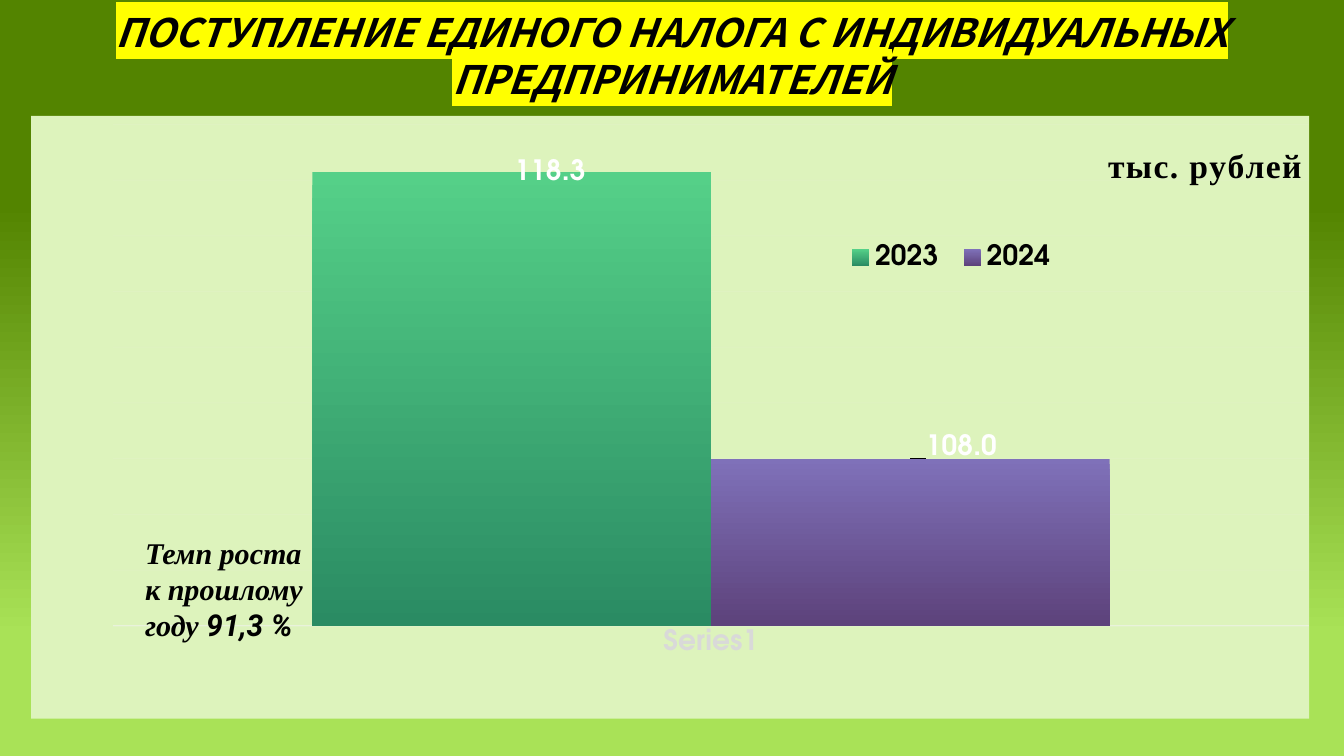
from dataclasses import dataclass

from lxml import etree
from pptx import Presentation
from pptx.chart.data import CategoryChartData
from pptx.dml.color import RGBColor
from pptx.enum.chart import XL_CHART_TYPE as ChartType
from pptx.enum.chart import XL_LABEL_POSITION as LabelPosition
from pptx.enum.chart import XL_LEGEND_POSITION as LegendPosition
from pptx.enum.chart import XL_TICK_LABEL_POSITION as TickLabels
from pptx.enum.chart import XL_TICK_MARK as TickMark
from pptx.enum.text import MSO_ANCHOR as Anchor
from pptx.enum.text import MSO_AUTO_SIZE as AutoSize
from pptx.enum.text import PP_ALIGN as Align
from pptx.oxml import parse_xml
from pptx.oxml.ns import nsdecls, qn
from pptx.util import Inches, Pt


@dataclass(frozen=True)
class Theme:
    background: tuple = ((0.27, "538400"), (0.84, "A9E257"))
    panel: str = "DDF3BC"
    ink: str = "000000"
    light: str = "FFFFFF"
    marker: str = "FFFF00"
    axis_text: str = "D9D9D9"
    rule: str = "F2F2F2"
    title_font: str = "Noto Sans CJK TC"
    chart_font: str = "TeX Gyre Adventor"
    serif_font: str = "Times New Roman"
    number_font: str = "Roboto"
    title_size: float = 28
    unit_size: float = 24
    note_size: float = 21.5
    chart_size: float = 20


THEME = Theme()

# Year, value, gradient colours, label shift as fractions of the chart
YEARS = (
    ("2023", 118.3, ("55D088", "2A8B63"), (0.03, 0.03)),
    ("2024", 108.0, ("7F71B9", "5D427B"), (0.04, 0.01)),
)


def style_font(font, *, name, size, color, bold=True, italic=False):
    font.name = name
    font.size = Pt(size)
    font.bold = bold
    font.italic = italic
    font.color.rgb = RGBColor.from_string(color)


def add_text(para, text, *, highlight=None, spacing=None, **style):
    span = para.add_run()
    span.text = text
    style_font(span.font, **style)
    properties = span.font._element
    if spacing:
        properties.set("spc", str(spacing))
    if highlight:
        properties.find(qn("a:solidFill")).addnext(parse_xml(
            f'<a:highlight {nsdecls("a")}><a:srgbClr val="{highlight}"/></a:highlight>'))
    return span


def fill_gradient(fill, stops):
    fill.gradient()
    fill.gradient_angle = 270
    for stop, (position, color) in zip(fill.gradient_stops, stops):
        stop.position = position
        stop.color.rgb = RGBColor.from_string(color)


def style_line(line, *, width, opacity):
    line.width = Pt(width)
    line.color.rgb = RGBColor.from_string(THEME.rule)
    color = line._ln.find(".//" + qn("a:srgbClr"))
    etree.SubElement(color, qn("a:alpha")).set("val", str(opacity * 1000))


def place(element, after, **values):
    """Give a chart part a manual layout, right after the named child."""
    old = element.find(qn("c:layout"))
    if old is not None:
        element.remove(old)
    layout = etree.Element(qn("c:layout"))
    manual = etree.SubElement(layout, qn("c:manualLayout"))
    for key, value in values.items():
        etree.SubElement(manual, qn("c:" + key)).set("val", str(value))
    if after:
        element.find(qn(after)).addnext(layout)
    else:
        element.insert(0, layout)


def add_title(page):
    title = page.shapes.title
    title.left, title.top = Inches(0), Inches(0)
    title.width, title.height = Inches(13.33), Inches(1.1)
    frame = title.text_frame
    frame.auto_size = AutoSize.NONE
    frame.vertical_anchor = Anchor.MIDDLE
    para = frame.paragraphs[0]
    para.alignment = Align.CENTER
    para.line_spacing = 1.0
    add_text(para, "ПОСТУПЛЕНИЕ ЕДИНОГО НАЛОГА С ИНДИВИДУАЛЬНЫХ ПРЕДПРИНИМАТЕЛЕЙ",
             name=THEME.title_font, size=THEME.title_size, color=THEME.ink,
             italic=True, highlight=THEME.marker)


def style_axes(chart, chart_text):
    categories = chart.category_axis
    categories.major_tick_mark = TickMark.NONE
    categories.minor_tick_mark = TickMark.NONE
    categories.tick_label_position = TickLabels.NEXT_TO_AXIS
    style_font(categories.tick_labels.font, color=THEME.axis_text, **chart_text)
    style_line(categories.format.line, width=1, opacity=54)

    values = chart.value_axis
    values.minimum_scale, values.maximum_scale = 102, 120
    values.tick_labels.number_format = "0.0"
    values.tick_labels.number_format_is_linked = False
    style_line(values.major_gridlines.format.line, width=0.75, opacity=10)
    values.visible = False


def add_tax_chart(page):
    data = CategoryChartData(number_format="0.0")
    data.categories = ["Series1"]
    for year, value, _, _ in YEARS:
        data.add_series(year, [value])
    chart = page.shapes.add_chart(
        ChartType.COLUMN_CLUSTERED, Inches(0.31), Inches(1.15),
        Inches(12.68), Inches(5.98), data).chart
    chart_text = dict(name=THEME.chart_font, size=THEME.chart_size)
    style_font(chart.font, color=THEME.light, bold=False, name=THEME.chart_font, size=10)

    # Panel and plot area
    root = chart._chartSpace
    root.find(qn("c:chart")).addnext(parse_xml(
        f'<c:spPr {nsdecls("c", "a")}><a:solidFill><a:srgbClr val="{THEME.panel}"/>'
        '</a:solidFill><a:ln><a:noFill/></a:ln></c:spPr>'))
    place(root.find(".//" + qn("c:plotArea")), None, layoutTarget="inner",
          xMode="edge", yMode="edge", x=0.064, y=0.014, w=0.936, h=0.832)
    style_axes(chart, chart_text)

    # Unit caption
    chart.has_title = True
    caption = chart.chart_title
    add_text(caption.text_frame.paragraphs[0], "тыс. рублей", name=THEME.serif_font,
             size=THEME.unit_size, color=THEME.ink, spacing=100)
    place(caption._element, "c:tx", xMode="edge", yMode="edge", x=0.838, y=0.037)

    # Legend
    chart.has_legend = True
    legend = chart.legend
    legend.position = LegendPosition.BOTTOM
    legend.include_in_layout = False
    style_font(legend.font, color=THEME.ink, **chart_text)
    place(legend._element, "c:legendPos", xMode="edge", yMode="edge",
          x=0.63, y=0.2, w=0.18, h=0.07)

    # Columns and their values
    plot = chart.plots[0]
    plot.gap_width, plot.overlap = 100, 0
    plot.vary_by_categories = False
    for series, (_, _, colors, (shift_x, shift_y)) in zip(plot.series, YEARS):
        fill_gradient(series.format.fill, zip((0, 1), colors))
        label = series.points[0].data_label
        style_font(label.font, color=THEME.light, **chart_text)
        label.position = LabelPosition.OUTSIDE_END
        element = series._element.find(".//" + qn("c:dLbl"))
        place(element, "c:idx", x=shift_x, y=shift_y)


def add_growth_note(page):
    box = page.shapes.add_textbox(Inches(1.34), Inches(5.25), Inches(1.91), Inches(1.19))
    frame = box.text_frame
    frame.word_wrap = True
    frame.auto_size = AutoSize.SHAPE_TO_FIT_TEXT
    para = frame.paragraphs[0]
    style = dict(size=THEME.note_size, color=THEME.ink, italic=True)
    add_text(para, "Темп роста к прошлому году ", name=THEME.serif_font, **style)
    add_text(para, "91,3 %", name=THEME.number_font, **style)


def main():
    deck = Presentation()
    deck.slide_width, deck.slide_height = Inches(13.33), Inches(7.5)
    page = deck.slides.add_slide(deck.slide_layouts[5])
    fill_gradient(page.background.fill, THEME.background)
    add_title(page)
    add_tax_chart(page)
    add_growth_note(page)
    deck.save("out.pptx")


if __name__ == "__main__":
    main()
